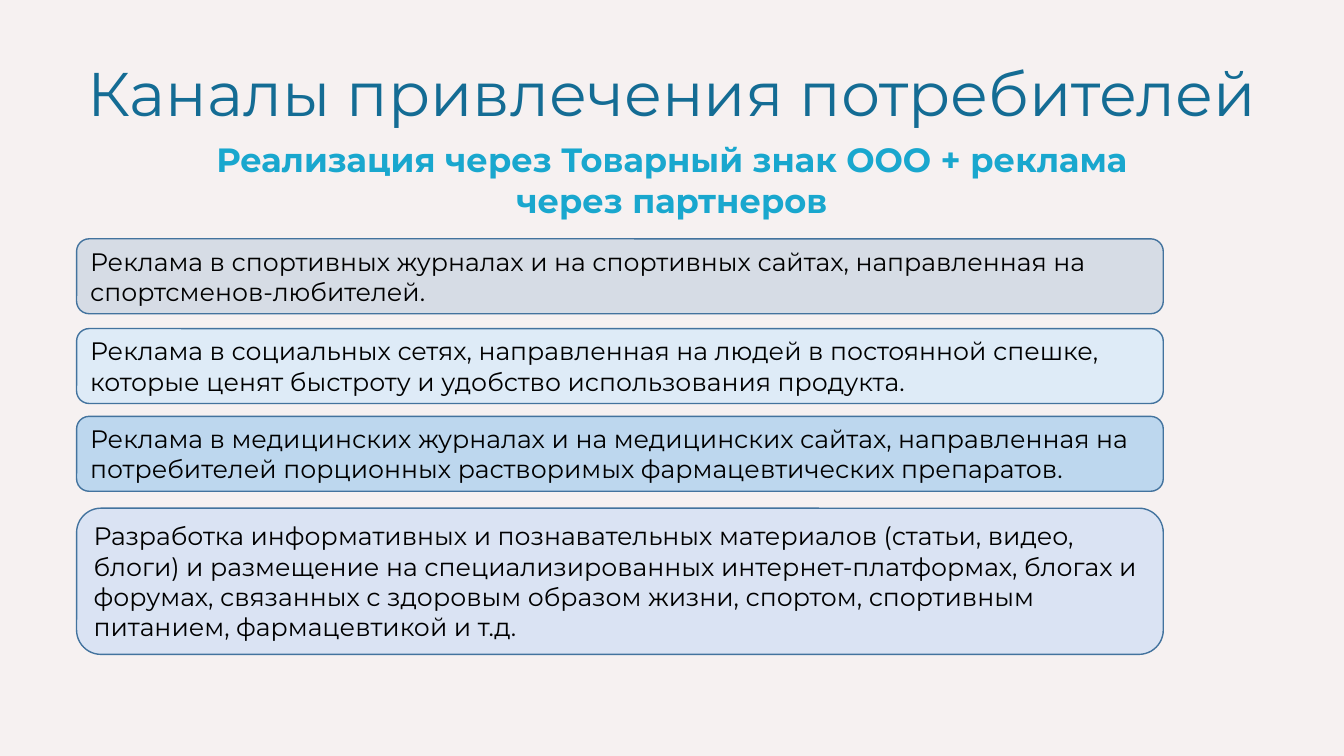
from pptx import Presentation
from pptx.dml.color import RGBColor
from pptx.enum.shapes import MSO_SHAPE
from pptx.enum.text import MSO_ANCHOR, MSO_AUTO_SIZE, PP_ALIGN
from pptx.util import Pt

ROUNDED = MSO_SHAPE.ROUNDED_RECTANGLE
MIDDLE = MSO_ANCHOR.MIDDLE
NO_FIT = MSO_AUTO_SIZE.NONE
LEFT, CENTER = PP_ALIGN.LEFT, PP_ALIGN.CENTER

BACKGROUND = RGBColor(0xF6, 0xF1, 0xF1)
DEEP_BLUE = RGBColor(0x14, 0x6C, 0x94)
CYAN = RGBColor(0x19, 0xA7, 0xCE)
OUTLINE = RGBColor(0x43, 0x73, 0x9E)
BLACK = RGBColor(0, 0, 0)
GREY_BLUE = RGBColor(0xD6, 0xDC, 0xE5)
PALE_BLUE = RGBColor(0xDE, 0xEB, 0xF7)
SKY_BLUE = RGBColor(0xBD, 0xD7, 0xEE)
LAVENDER = RGBColor(0xDA, 0xE3, 0xF3)

CHANNEL_LEFT, CHANNEL_WIDTH = 54.7, 776.2

# Top, height, fill and wording of each channel
CHANNELS = [
    (170.6, 53.5, GREY_BLUE,
     "Реклама в спортивных журналах и на спортивных сайтах, "
     "направленная на спортсменов-любителей."),
    (234.7, 53.5, PALE_BLUE,
     "Реклама в социальных сетях, направленная на людей в постоянной "
     "спешке, которые ценят быстроту и удобство использования продукта."),
    (297.4, 53.5, SKY_BLUE,
     "Реклама в медицинских журналах и на медицинских сайтах, направленная "
     "на потребителей порционных растворимых фармацевтических препаратов."),
    (363, 104.4, LAVENDER,
     "Разработка информативных и познавательных материалов (статьи, видео, "
     "блоги) и размещение на специализированных интернет-платформах, блогах "
     "и форумах, связанных с здоровым образом жизни, спортом, спортивным "
     "питанием, фармацевтикой и т.д."),
]


class ChannelSlide:
    """Holds the font and the current slide."""

    def __init__(self, slide, font_name):
        self.slide = slide
        self.font_name = font_name
        slide.background.fill.solid()
        slide.background.fill.fore_color.rgb = BACKGROUND

    def set_text(self, shape, text, size, color, align, bold=False):
        frame = shape.text_frame
        frame.word_wrap = True
        frame.auto_size = NO_FIT
        frame.text = text
        paragraph = frame.paragraphs[0]
        paragraph.alignment = align
        font = paragraph.font
        font.name, font.size, font.bold = self.font_name, Pt(size), bold
        font.color.rgb = color
        return paragraph

    def title(self, text, left, top, width, height):
        heading = self.slide.shapes.title
        heading.left, heading.top = Pt(left), Pt(top)
        heading.width, heading.height = Pt(width), Pt(height)
        heading.text_frame.vertical_anchor = MIDDLE
        self.set_text(heading, text, 44, DEEP_BLUE, CENTER).line_spacing = 0.9

    def subtitle(self, text, left, top, width, height):
        caption = self.slide.shapes.add_textbox(
            Pt(left), Pt(top), Pt(width), Pt(height))
        self.set_text(caption, text, 24, CYAN, CENTER, bold=True)

    def channel(self, text, top, height, fill):
        panel = self.slide.shapes.add_shape(
            ROUNDED, Pt(CHANNEL_LEFT), Pt(top), Pt(CHANNEL_WIDTH), Pt(height))
        panel.shadow.inherit = False
        panel.fill.solid()
        panel.fill.fore_color.rgb = fill
        panel.line.color.rgb = OUTLINE
        panel.line.width = Pt(1)
        panel.text_frame.vertical_anchor = MIDDLE
        self.set_text(panel, text, 18, BLACK, LEFT)


def main():
    deck = Presentation()
    deck.slide_width, deck.slide_height = Pt(960), Pt(540)
    title_only = deck.slide_layouts[5]
    page = ChannelSlide(deck.slides.add_slide(title_only), "Montserrat")

    # Heading
    page.title("Каналы привлечения потребителей", 19.4, 39.6, 921.6, 58.3)
    page.subtitle("Реализация через Товарный знак ООО + реклама через партнеров",
                  109.4, 95.8, 740.9, 65.5)

    # Advertising channels
    for top, height, fill, text in CHANNELS:
        page.channel(text, top, height, fill)

    deck.save("out.pptx")


if __name__ == "__main__":
    main()
